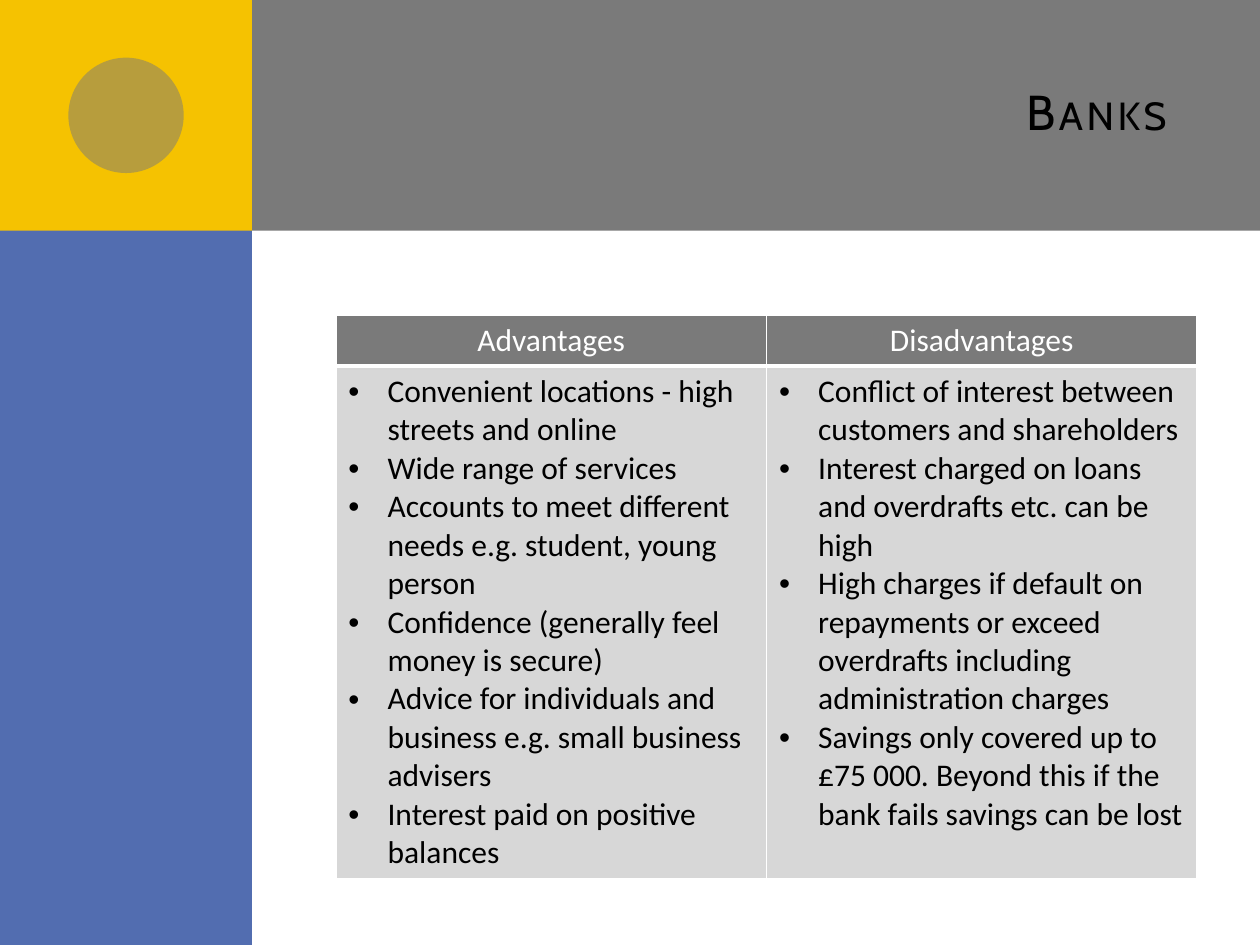
from lxml import etree
from pptx import Presentation
from pptx import util as u
from pptx.dml.color import RGBColor
from pptx.enum import shapes, text
from pptx.oxml import ns

GREY = RGBColor(0x7A, 0x7A, 0x7A)
BLUE = RGBColor(0x52, 0x6D, 0xB0)
YELLOW = RGBColor(0xF5, 0xC2, 0x01)
PALE = RGBColor(0xD7, 0xD7, 0xD7)
WHITE = RGBColor(0xFF, 0xFF, 0xFF)
BLACK = RGBColor(0, 0, 0)

SIDE_WIDTH, BAND_HEIGHT = 5.08, 4.65
CONTENT_LEFT, CONTENT_WIDTH = 6.77, 17.36
INDENT = u.Cm(0.79)

COLUMNS = {
    "Advantages": [
        "Convenient locations - high streets and online",
        "Wide range of services",
        "Accounts to meet different needs e.g. student, young person",
        "Confidence (generally feel money is secure)",
        "Advice for individuals and business e.g. small business advisers",
        "Interest paid on positive balances",
    ],
    "Disadvantages": [
        "Conflict of interest between customers and shareholders",
        "Interest charged on loans and overdrafts etc. can be high",
        "High charges if default on repayments or exceed overdrafts "
        "including administration charges",
        "Savings only covered up to £75 000. Beyond this if the bank fails "
        "savings can be lost",
    ],
}


def add_block(slide, kind, left, top, width, height, color, opacity=None):
    shape = slide.shapes.add_shape(
        kind, u.Cm(left), u.Cm(top), u.Cm(width), u.Cm(height))
    shape.shadow.inherit = False
    shape.fill.solid()
    shape.fill.fore_color.rgb = color
    shape.line.fill.background()
    if opacity is not None:
        color_node = shape.element.spPr.find(".//" + ns.qn("a:srgbClr"))
        etree.SubElement(color_node, ns.qn("a:alpha"), val=str(opacity * 1000))


def add_run(paragraph, words, font_name, size, color):
    run = paragraph.add_run()
    run.text = words
    run.font.name = font_name
    run.font.size = u.Pt(size)
    run.font.color.rgb = color
    return run


def format_title(slide, words):
    title = slide.shapes.title
    title.left, title.top = u.Cm(CONTENT_LEFT), u.Cm(0.64)
    title.width, title.height = u.Cm(CONTENT_WIDTH), u.Cm(3.18)
    title.text_frame.vertical_anchor = text.MSO_ANCHOR.MIDDLE
    paragraph = title.text_frame.paragraphs[0]
    paragraph.alignment = text.PP_ALIGN.RIGHT
    run = add_run(paragraph, words, "Cabin", 28, BLACK)
    run.font._element.set("cap", "small")
    run.font._element.set("spc", "200")
    # Bring the title in front of the blocks
    title.element.getparent().append(title.element)


def set_bullet(paragraph):
    properties = paragraph._p.get_or_add_pPr()
    properties.set("marL", str(INDENT))
    properties.set("indent", str(-INDENT))
    etree.SubElement(properties, ns.qn("a:buFont"), typeface="Arial")
    etree.SubElement(properties, ns.qn("a:buChar"), char="•")


def style_cell(cell, fill, top_width, bottom_width):
    properties = cell._tc.get_or_add_tcPr()
    widths = {"lnL": 1, "lnR": 1, "lnT": top_width, "lnB": bottom_width}
    for side, width in widths.items():
        line = etree.SubElement(
            properties, ns.qn("a:" + side), w=str(u.Pt(width)))
        solid = etree.SubElement(line, ns.qn("a:solidFill"))
        etree.SubElement(solid, ns.qn("a:srgbClr"), val=str(WHITE))
    cell.fill.solid()
    cell.fill.fore_color.rgb = fill


def add_comparison(slide, columns):
    table = slide.shapes.add_table(
        2, len(columns), u.Cm(CONTENT_LEFT), u.Cm(6.35),
        u.Cm(CONTENT_WIDTH), u.Cm(11.2)).table
    table.rows[0].height = u.Cm(1.03)
    table.rows[1].height = u.Cm(10.17)
    for index, (heading, points) in enumerate(columns.items()):
        # Heading
        header = table.cell(0, index)
        style_cell(header, GREY, 1, 3)
        paragraph = header.text_frame.paragraphs[0]
        paragraph.alignment = text.PP_ALIGN.CENTER
        run = add_run(paragraph, heading, "Calibri", 18, WHITE)
        run.font.bold = False
        # Bulleted points
        body = table.cell(1, index)
        style_cell(body, PALE, 3, 1)
        frame = body.text_frame
        for number, point in enumerate(points):
            paragraph = frame.add_paragraph() if number else frame.paragraphs[0]
            set_bullet(paragraph)
            add_run(paragraph, point, "Calibri", 18, BLACK)


def main():
    presentation = Presentation()
    presentation.slide_width = u.Cm(25.4)
    presentation.slide_height = u.Cm(19.05)
    slide = presentation.slides.add_slide(presentation.slide_layouts[5])

    # Banner, side panel, corner and its disc
    rectangle = shapes.MSO_SHAPE.RECTANGLE
    add_block(slide, rectangle, 1.27, 0, 24.13, BAND_HEIGHT, GREY)
    add_block(slide, rectangle, 0, 0, SIDE_WIDTH, 19.05, BLUE)
    add_block(slide, rectangle, 0, 0, SIDE_WIDTH, BAND_HEIGHT, YELLOW)
    disc = BAND_HEIGHT / 2
    add_block(slide, shapes.MSO_SHAPE.OVAL, (SIDE_WIDTH - disc) / 2,
              (BAND_HEIGHT - disc) / 2, disc, disc, GREY, opacity=50)

    format_title(slide, "Banks")
    add_comparison(slide, COLUMNS)
    presentation.save("out.pptx")


if __name__ == "__main__":
    main()
